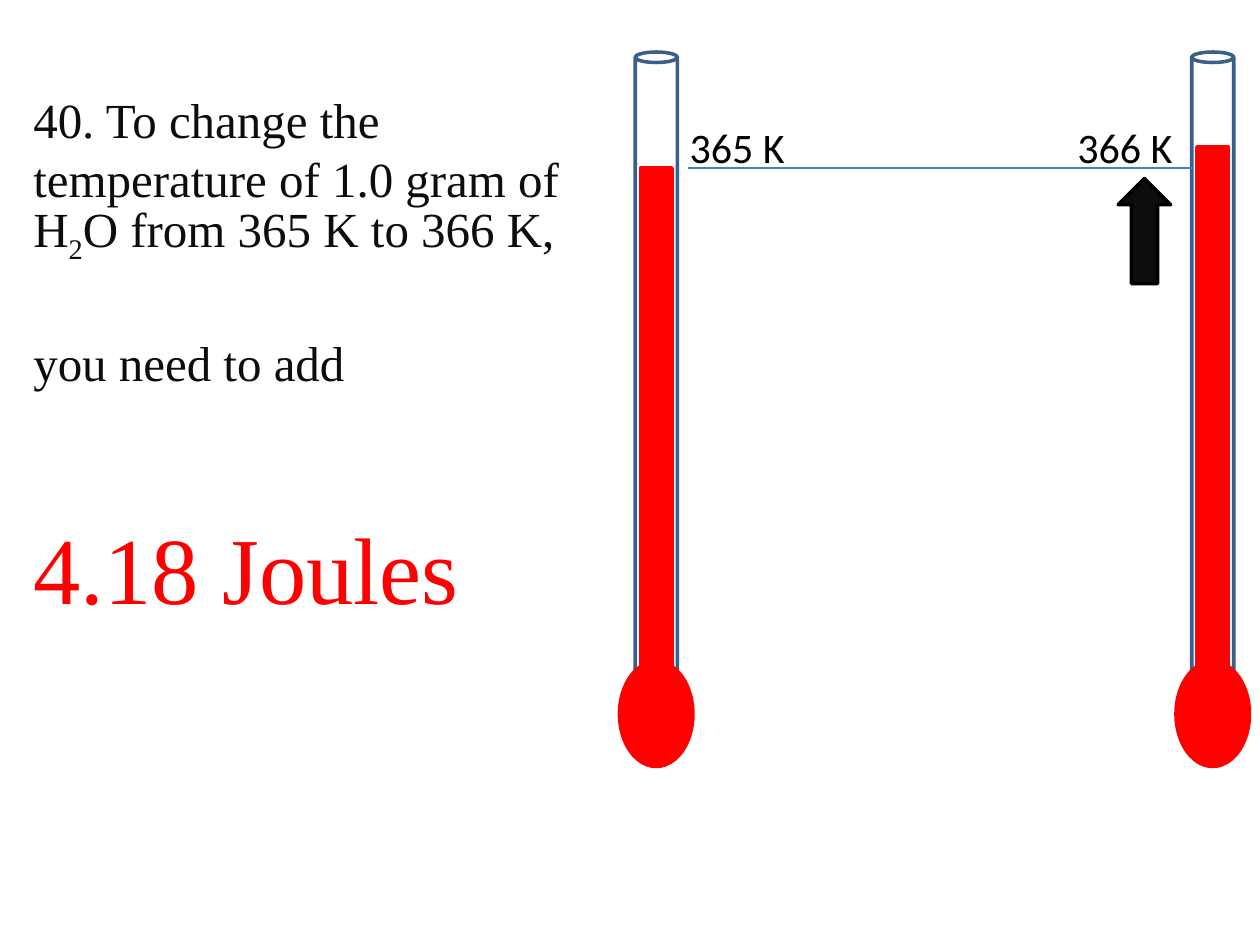
from lxml.etree import SubElement
from pptx import Presentation
from pptx.dml.color import RGBColor
from pptx.enum.shapes import MSO_CONNECTOR, MSO_SHAPE
from pptx.oxml.ns import qn
from pptx.util import Pt

RED = RGBColor(0xFF, 0x00, 0x00)
BLACK = RGBColor(0x00, 0x00, 0x00)
CHARCOAL = RGBColor(0x0D, 0x0D, 0x0D)
GLASS_BLUE = RGBColor(0x3A, 0x5F, 0x8C)
LEVEL_BLUE = RGBColor(0x4B, 0x7E, 0xBC)

BULB_BOTTOM = 438
TUBE_BOTTOM = 408


def add_run(paragraph, text, *, font="Times New Roman", size=28, color=CHARCOAL, baseline=None):
    run = paragraph.add_run()
    run.text = text
    run.font.name = font
    run.font.size = Pt(size)
    run.font.color.rgb = color
    if baseline is not None:
        run.font._element.set("baseline", str(baseline))


class SlideBuilder:
    """Draws styled elements on the current slide, with lengths in points."""

    def __init__(self, slide, line_width=2):
        self.slide = slide
        self.line_width = line_width

    def shape(self, kind, left, top, width, height, line, fill=None):
        shape = self.slide.shapes.add_shape(kind, Pt(left), Pt(top), Pt(width), Pt(height))
        shape.shadow.inherit = False
        if fill is None:
            shape.fill.background()
        else:
            shape.fill.solid()
            shape.fill.fore_color.rgb = fill
        shape.line.color.rgb = line
        shape.line.width = Pt(self.line_width)

    def thermometer(self, center, level):
        self.shape(MSO_SHAPE.CAN, center - 12, 29.75, 24, TUBE_BOTTOM - 29.75, GLASS_BLUE)
        self.shape(MSO_SHAPE.OVAL, center - 21, BULB_BOTTOM - 60, 42, 60, RED, RED)
        self.shape(MSO_SHAPE.RECTANGLE, center - 9, level, 18, TUBE_BOTTOM - level, RED, RED)

    def level_line(self, left, right, top):
        connector = self.slide.shapes.add_connector(
            MSO_CONNECTOR.STRAIGHT, Pt(left), Pt(top), Pt(right), Pt(top))
        connector.line.color.rgb = LEVEL_BLUE
        connector.line.width = Pt(0.75)
        SubElement(connector._element.spPr, qn("a:effectLst"))

    def text_frame(self, left, top, width, height):
        box = self.slide.shapes.add_textbox(Pt(left), Pt(top), Pt(width), Pt(height))
        box.text_frame.word_wrap = True
        return box.text_frame

    def level_labels(self, left, top, width, height, labels, tab):
        paragraph = self.text_frame(left, top, width, height).paragraphs[0]
        tab_list = SubElement(paragraph._p.get_or_add_pPr(), qn("a:tabLst"))
        SubElement(tab_list, qn("a:tab"), pos=str(Pt(tab)), algn="r")
        add_run(paragraph, "\t".join(labels), font="Calibri", size=24, color=BLACK)

    def question(self, left, top, width, height):
        frame = self.text_frame(left, top, width, height)
        change = frame.paragraphs[0]
        add_run(change, "40. To change the temperature of 1.0 gram of H")
        add_run(change, "2", baseline=-25000)
        add_run(change, "O from 365 K to 366 K,", baseline=0)
        prompt = frame.add_paragraph()
        add_run(prompt, "you need to add")
        answer = frame.add_paragraph()
        add_run(answer, "4.18 Joules", size=54, color=RED)
        spacing = [(change, 33.4, 0), (prompt, 33.4, 38.6), (answer, 62, 70.6)]
        for paragraph, line_spacing, space_before in spacing:
            paragraph.line_spacing = Pt(line_spacing)
            paragraph.space_before = Pt(space_before)


def main():
    presentation = Presentation()
    presentation.slide_width = Pt(720)
    presentation.slide_height = Pt(540)
    builder = SlideBuilder(presentation.slides.add_slide(presentation.slide_layouts[6]))
    builder.thermometer(center=375, level=96)
    builder.thermometer(center=693, level=84)
    builder.level_line(393, 681, 96)
    builder.level_labels(387, 66, 294, 36, ["365 K", "366 K"], tab=276)
    builder.question(12, 48, 324, 344)
    builder.shape(MSO_SHAPE.UP_ARROW, 639, 102, 30, 60, BLACK, CHARCOAL)
    presentation.save("out.pptx")


if __name__ == "__main__":
    main()
